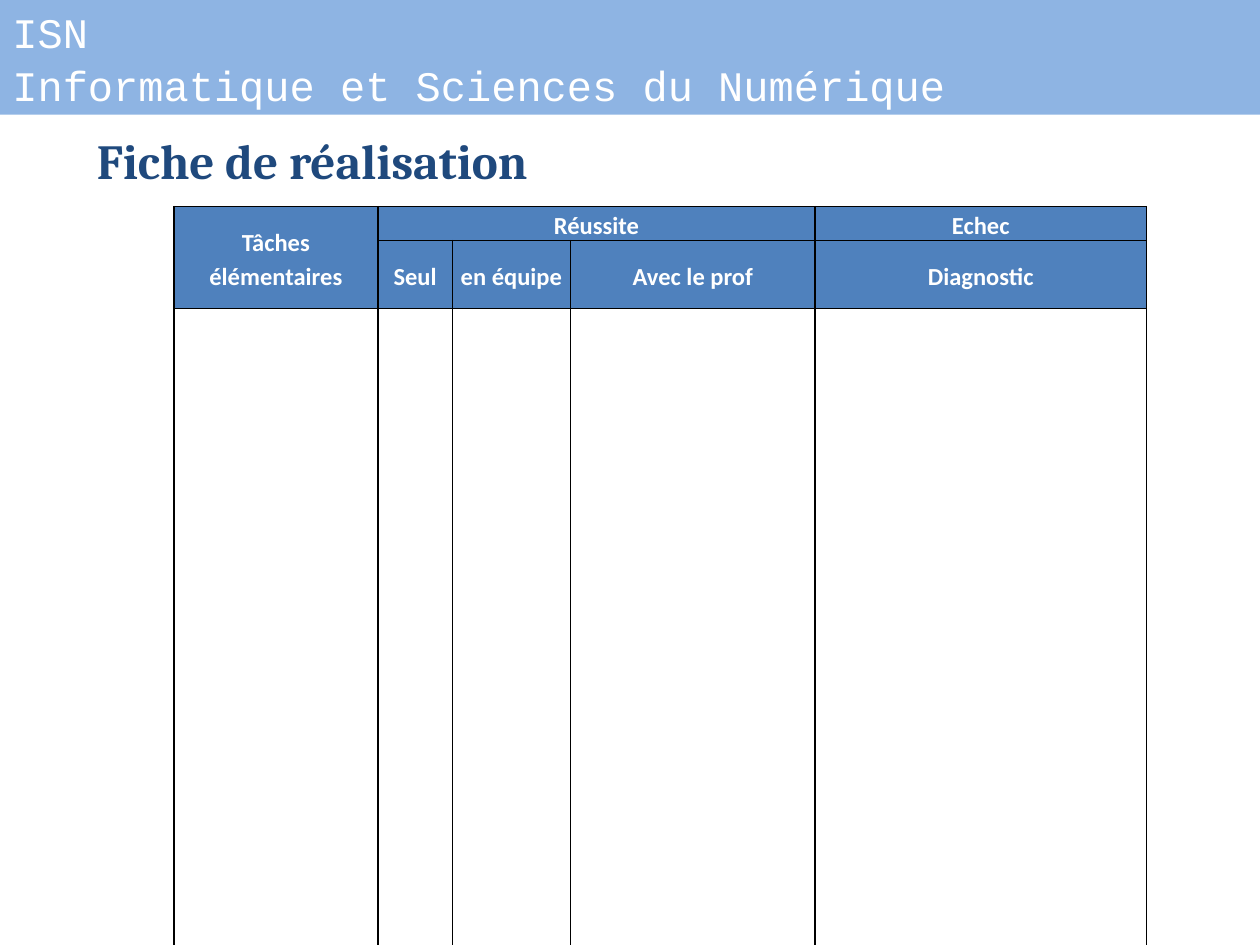
import dataclasses

import lxml.etree
import pptx
import pptx.dml.color
import pptx.enum.shapes
import pptx.enum.text
import pptx.oxml
import pptx.oxml.ns
import pptx.util
from pptx.util import Inches

WHITE = pptx.dml.color.RGBColor(0xFF, 0xFF, 0xFF)
BLACK = pptx.dml.color.RGBColor(0x00, 0x00, 0x00)
NAVY = pptx.dml.color.RGBColor(0x1F, 0x49, 0x7D)
BLUE = pptx.dml.color.RGBColor(0x4F, 0x81, 0xBD)
SKY = pptx.dml.color.RGBColor(0x8E, 0xB4, 0xE3)

COLS = [1.62, 0.59, 0.94, 1.94, 2.63]
ROWS = [0.27, 0.54, 5.07]


@dataclasses.dataclass
class Head:
    row: int
    col: int
    text: str
    rows: int = 1
    cols: int = 1


HEADS = [
    Head(0, 0, "Tâches élémentaires", rows=2),
    Head(0, 1, "Réussite", cols=3),
    Head(0, 4, "Echec"),
    Head(1, 1, "Seul"),
    Head(1, 2, "en équipe"),
    Head(1, 3, "Avec le prof"),
    Head(1, 4, "Diagnostic"),
]


def style(para, name: str, size: float, color, bold: bool = False) -> None:
    font = para.font
    font.name = name
    font.size = pptx.util.Pt(size)
    font.color.rgb = color
    font.bold = bold


def border(cell) -> None:
    """Draw a thin black line on all four sides of the cell."""
    props = cell._tc.get_or_add_tcPr()
    for at, side in enumerate(("lnL", "lnR", "lnT", "lnB")):
        line = lxml.etree.Element(pptx.oxml.ns.qn(f"a:{side}"), w=str(pptx.util.Pt(1)))
        fill = lxml.etree.SubElement(line, pptx.oxml.ns.qn("a:solidFill"))
        lxml.etree.SubElement(fill, pptx.oxml.ns.qn("a:srgbClr"), val=str(BLACK))
        props.insert(at, line)


def add_title(slide) -> None:
    box = slide.shapes.add_textbox(Inches(0.67), Inches(0.99), Inches(9.13), Inches(1.04))
    box.text_frame.word_wrap = True
    para = box.text_frame.paragraphs[0]
    para.text = "Fiche de réalisation"
    style(para, "Cambria", 28, NAVY, bold=True)


def add_grid(slide) -> None:
    grid = slide.shapes.add_table(
        len(ROWS), len(COLS), Inches(1.38), Inches(1.64),
        Inches(sum(COLS)), Inches(sum(ROWS)),
    ).table
    for col, width in zip(grid.columns, COLS):
        col.width = Inches(width)
    for row, height in zip(grid.rows, ROWS):
        row.height = Inches(height)
    for cell in grid.iter_cells():
        cell.fill.background()
        border(cell)
    for head in HEADS:
        add_head(grid, head)


def add_head(grid, head: Head) -> None:
    cell = grid.cell(head.row, head.col)
    if head.rows > 1 or head.cols > 1:
        cell.merge(grid.cell(head.row + head.rows - 1, head.col + head.cols - 1))
    cell.fill.solid()
    cell.fill.fore_color.rgb = BLUE
    cell.margin_left = cell.margin_right = Inches(0.04)
    cell.margin_top = cell.margin_bottom = Inches(0)
    cell.vertical_anchor = pptx.enum.text.MSO_ANCHOR.MIDDLE
    para = cell.text_frame.paragraphs[0]
    para.text = head.text
    para.alignment = pptx.enum.text.PP_ALIGN.CENTER
    para.line_spacing = 1.15
    style(para, "Calibri", 14, WHITE, bold=True)


def add_banner(slide) -> None:
    bar = slide.shapes.add_shape(
        pptx.enum.shapes.MSO_SHAPE.RECTANGLE, 0, 0, Inches(10), Inches(0.91)
    )
    bar.shadow.inherit = False
    bar.fill.solid()
    bar.fill.fore_color.rgb = SKY
    bar.line.fill.background()
    frame = bar.text_frame
    frame.word_wrap = True
    frame.vertical_anchor = pptx.enum.text.MSO_ANCHOR.MIDDLE
    frame.text = "ISN\nInformatique et Sciences du Numérique"
    for para in frame.paragraphs:
        para.alignment = pptx.enum.text.PP_ALIGN.LEFT
        para.line_spacing = 1.05
        style(para, "Courier New", 24, WHITE)


def main() -> None:
    deck = pptx.Presentation()
    deck.slide_width, deck.slide_height = Inches(10), Inches(7.5)
    slide = deck.slides.add_slide(deck.slide_layouts[6])
    add_title(slide)
    add_grid(slide)
    add_banner(slide)
    deck.save("out.pptx")


if __name__ == "__main__":
    main()
